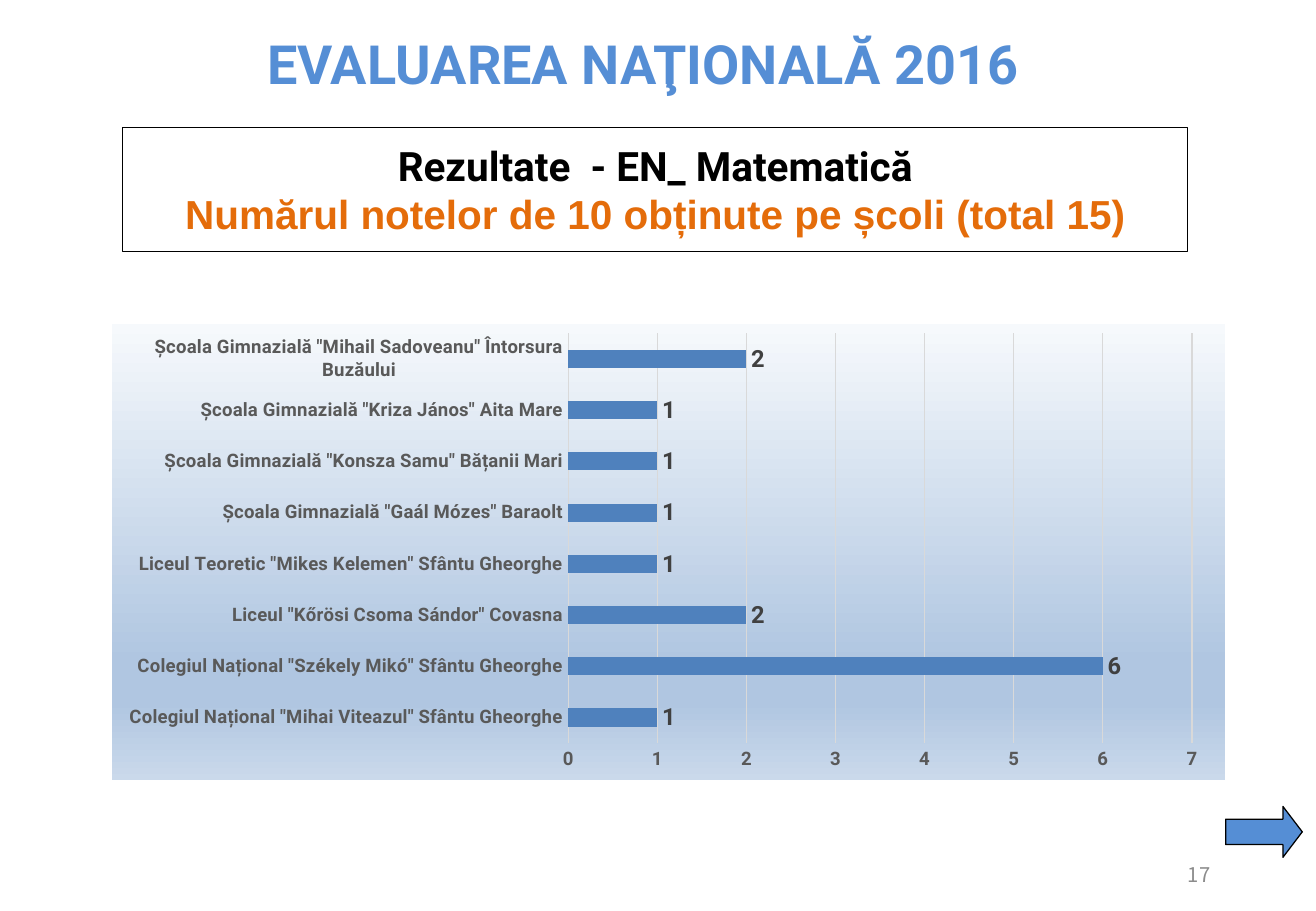
from dataclasses import dataclass
from pptx import Presentation
from pptx.chart.data import CategoryChartData
from pptx.dml.color import RGBColor
from pptx.enum.chart import XL_CHART_TYPE, XL_LABEL_POSITION, XL_TICK_MARK
from pptx.enum.shapes import MSO_SHAPE
from pptx.enum.text import MSO_ANCHOR, MSO_AUTO_SIZE, PP_ALIGN
from pptx.oxml import parse_xml
from pptx.oxml.ns import nsdecls, qn
from pptx.util import Pt


@dataclass(frozen=True)
class Theme:
    """Colours, fonts and type sizes of the slide."""
    black: str = "000000"
    blue: str = "558ED5"
    orange: str = "E46C0A"
    bar: str = "4F81BD"
    grid: str = "D9D9D9"
    axis: str = "595959"
    value: str = "404040"
    number: str = "8C8C8C"
    gradient: tuple = ((0, "F6F9FC"), (74, "B0C6E1"), (83, "B0C6E1"), (100, "CAD9EB"))
    main: str = "Roboto"
    accent: str = "Arial"
    number_font: str = "Noto Sans CJK KR"
    heading: int = 32
    title: int = 24
    label: int = 14
    small: int = 12
    tick: int = 11
    line: float = 0.75


T = Theme()

RESULTS = (
    ('Colegiul Național "Mihai Viteazul" Sfântu Gheorghe', 1),
    ('Colegiul Național "Székely Mikó" Sfântu Gheorghe', 6),
    ('Liceul "Kőrösi Csoma Sándor" Covasna', 2),
    ('Liceul Teoretic "Mikes Kelemen" Sfântu Gheorghe', 1),
    ('Școala Gimnazială "Gaál Mózes" Baraolt', 1),
    ('Școala Gimnazială "Konsza Samu" Bățanii Mari', 1),
    ('Școala Gimnazială "Kriza János" Aita Mare', 1),
    ('Școala Gimnazială "Mihail Sadoveanu" Întorsura Buzăului', 2),
)


def style_font(font, size, color, name=T.main, bold=True):
    """Format a font."""
    font.size, font.name, font.bold = Pt(size), name, bold
    font.color.rgb = RGBColor.from_string(color)


def style_line(line, color):
    """Format a thin solid line."""
    line.color.rgb = RGBColor.from_string(color)
    line.width = Pt(T.line)


def write(p, text, align=PP_ALIGN.CENTER, **fmt):
    """Add a formatted run to a paragraph."""
    p.alignment = align
    r = p.add_run()
    r.text = text
    style_font(r.font, **fmt)


def text_box(s, box, text, anchor=MSO_ANCHOR.TOP, **fmt):
    """Add a wrapped one-paragraph text box."""
    tf = s.shapes.add_textbox(*map(Pt, box)).text_frame
    tf.word_wrap, tf.vertical_anchor = True, anchor
    write(tf.paragraphs[0], text, **fmt)


def framed_title(s, box):
    """Place the two-line title in its frame."""
    sp = s.shapes.title
    sp.left, sp.top, sp.width, sp.height = map(Pt, box)
    style_line(sp.line, T.black)
    tf = sp.text_frame
    tf.word_wrap, tf.auto_size = True, MSO_AUTO_SIZE.NONE
    tf.vertical_anchor = MSO_ANCHOR.MIDDLE
    p = tf.paragraphs[0]
    write(p, "Rezultate  - EN_ Matematică", size=T.title, color=T.black)
    p.add_line_break()
    write(p, "Numărul notelor de 10 obținute pe școli (total 15)",
          size=T.title, color=T.orange, name=T.accent)


def next_arrow(s, box):
    """Draw the arrow that points to the next slide."""
    sp = s.shapes.add_shape(MSO_SHAPE.RIGHT_ARROW, *map(Pt, box))
    sp.adjustments[1] = 0.38
    sp.shadow.inherit = False
    sp.fill.solid()
    sp.fill.fore_color.rgb = RGBColor.from_string(T.blue)
    style_line(sp.line, T.black)


def chart_background(chart):
    """Fill the chart area with the vertical gradient."""
    stops = "".join(f'<a:gs pos="{pos * 1000}"><a:srgbClr val="{color}"/></a:gs>'
                    for pos, color in T.gradient)
    fill = parse_xml(
        f'<c:spPr {nsdecls("c", "a")}><a:gradFill><a:gsLst>{stops}</a:gsLst>'
        '<a:lin ang="5400000" scaled="0"/></a:gradFill><a:ln><a:noFill/></a:ln></c:spPr>')
    chart.element.find(qn("c:chart")).addnext(fill)


def plot_layout(chart, **place):
    """Fix the inner plot area as fractions of the chart."""
    area = chart.element.find(qn("c:chart")).find(qn("c:plotArea"))
    old = area.find(qn("c:layout"))
    if old is not None:
        area.remove(old)
    values = "".join(f'<c:{key} val="{val}"/>' for key, val in place.items())
    area.insert(0, parse_xml(
        f'<c:layout {nsdecls("c")}><c:manualLayout><c:layoutTarget val="inner"/>'
        f'<c:xMode val="edge"/><c:yMode val="edge"/>{values}</c:manualLayout></c:layout>'))


def results_chart(s, box):
    """Add the bar chart of top marks by school."""
    data = CategoryChartData(number_format="General")
    data.categories = [school for school, _ in RESULTS]
    data.add_series("Series 1", [count for _, count in RESULTS])
    chart = s.shapes.add_chart(XL_CHART_TYPE.BAR_CLUSTERED, *map(Pt, box), data).chart
    chart.has_legend = chart.has_title = False
    style_font(chart.font, T.tick, T.black)
    chart_background(chart)
    plot_layout(chart, x=0.41, y=0.02, w=0.56, h=0.9)

    cat, val = chart.category_axis, chart.value_axis
    for axis in (cat, val):
        axis.major_tick_mark = axis.minor_tick_mark = XL_TICK_MARK.NONE
        style_font(axis.tick_labels.font, T.tick, T.axis)
    style_line(cat.format.line, T.grid)
    val.format.line.fill.background()
    val.minimum_scale, val.maximum_scale, val.major_unit = 0, 7, 1
    val.has_major_gridlines = True
    style_line(val.major_gridlines.format.line, T.grid)

    plot = chart.plots[0]
    plot.gap_width, plot.vary_by_categories = 182, False
    fill = plot.series[0].format.fill
    fill.solid()
    fill.fore_color.rgb = RGBColor.from_string(T.bar)
    plot.has_data_labels = True
    labels = plot.data_labels
    labels.show_value, labels.position = True, XL_LABEL_POSITION.OUTSIDE_END
    style_font(labels.font, T.label, T.value)


def results_slide(prs):
    """Build the slide of mathematics results."""
    s = prs.slides.add_slide(prs.slide_layouts[5])
    framed_title(s, (72.7, 75.6, 631.4, 73.4))
    next_arrow(s, (726.5, 478, 45.4, 30.2))
    text_box(s, (84.2, 14.4, 594, 45.4), "EVALUAREA NAŢIONALĂ 2016",
             size=T.heading, color=T.blue)
    results_chart(s, (66.2, 192.2, 660.2, 270))
    text_box(s, (697, 504, 59, 28.8), "17", MSO_ANCHOR.MIDDLE, align=PP_ALIGN.LEFT,
             size=T.small, color=T.number, name=T.number_font, bold=False)


def main():
    """Create and save the presentation."""
    prs = Presentation()
    prs.slide_width, prs.slide_height = Pt(780), Pt(540)
    results_slide(prs)
    prs.save("out.pptx")


if __name__ == "__main__":
    main()
